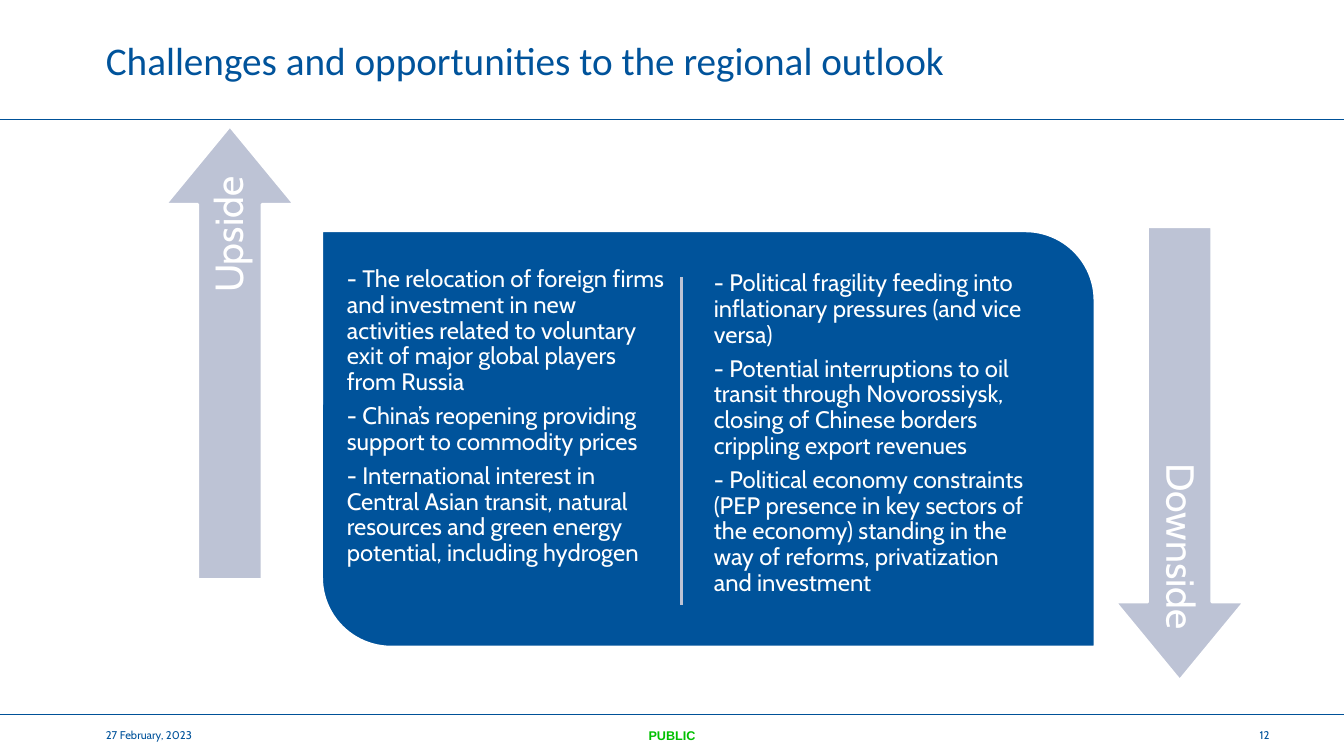
from lxml.etree import SubElement
from pptx import Presentation
from pptx.dml.color import RGBColor
from pptx.enum.shapes import MSO_CONNECTOR, MSO_SHAPE
from pptx.enum.text import MSO_ANCHOR, PP_ALIGN
from pptx.oxml.ns import qn
from pptx.util import Inches, Pt

BLUE, RULE_BLUE, GREY, WHITE, GREEN = "00539B", "005198", "BDC3D5", "FFFFFF", "00C000"
SLIDE_WIDTH, SLIDE_HEIGHT = 13.33, 7.5
HEADER_BOTTOM, FOOTER_TOP = 1.18, 7.09
FOOTER_HEIGHT = SLIDE_HEIGHT - FOOTER_TOP

UPSIDES = [
    "- The relocation of foreign firms and investment in new activities related to "
    "voluntary exit of major global players from Russia",
    "- China’s reopening providing support to commodity prices",
    "- International interest in Central Asian transit, natural resources and green "
    "energy potential, including hydrogen",
]
DOWNSIDES = [
    "- Political fragility feeding into inflationary pressures (and vice versa)",
    "- Potential interruptions to oil transit through Novorossiysk, closing of Chinese "
    "borders crippling export revenues",
    "- Political economy constraints (PEP presence in key sectors of the economy) "
    "standing in the way of reforms, privatization and investment",
]


def rgb(value):
    return RGBColor.from_string(value)


def write(frame, paragraphs, size, font="Cabin", color=WHITE, bold=False,
          align=PP_ALIGN.LEFT, anchor=MSO_ANCHOR.MIDDLE, inset=0, line=1.0, after=0):
    frame.word_wrap = True
    frame.vertical_anchor = anchor
    frame.margin_left = frame.margin_right = Inches(inset)
    frame.margin_top = frame.margin_bottom = Inches(inset)
    for index, text in enumerate(paragraphs):
        paragraph = frame.add_paragraph() if index else frame.paragraphs[0]
        paragraph.text = text
        paragraph.alignment = align
        paragraph.line_spacing = line
        paragraph.space_before, paragraph.space_after = Pt(0), Pt(after)
        paragraph.font.name, paragraph.font.size = font, Pt(size)
        paragraph.font.bold = bold
        paragraph.font.color.rgb = rgb(color)


def place(item, left, top, width, height):
    item.left, item.top = Inches(left), Inches(top)
    item.width, item.height = Inches(width), Inches(height)


def add_text(slide, box, paragraphs, size, rotation=0, **text_format):
    label = slide.shapes.add_textbox(*map(Inches, box))
    label.rotation = rotation
    write(label.text_frame, paragraphs, size, **text_format)


def add_rule(slide, start, end, color, width):
    rule = slide.shapes.add_connector(MSO_CONNECTOR.STRAIGHT, *map(Inches, start + end))
    rule.line.color.rgb = rgb(color)
    rule.line.width = Pt(width)
    SubElement(rule._element.spPr, qn("a:effectLst"))


def add_block(slide, preset, box, color, adjustments, rotation=0):
    block = slide.shapes.add_shape(preset, *map(Inches, box))
    for index, value in enumerate(adjustments):
        block.adjustments[index] = value
    block.rotation = rotation
    block.shadow.inherit = False
    block.fill.solid()
    block.fill.fore_color.rgb = rgb(color)
    block.line.color.rgb = rgb(WHITE)
    block.line.width = Pt(2)


def add_direction(slide, word, arrow_at, word_at, rotation):
    add_block(slide, MSO_SHAPE.RIGHT_ARROW, arrow_at + (4.5, 1.28), GREY,
              (0.498, 0.607), rotation)
    add_text(slide, word_at + (4.11, 0.64), [word], 28, rotation,
             align=PP_ALIGN.RIGHT, inset=0.12, line=0.9, after=10)


def main():
    prs = Presentation()
    prs.slide_width, prs.slide_height = Inches(SLIDE_WIDTH), Inches(SLIDE_HEIGHT)
    slide = prs.slides.add_slide(prs.slide_layouts[5])

    # Header and footer rules
    for y in (HEADER_BOTTOM, FOOTER_TOP):
        add_rule(slide, (0, y), (SLIDE_WIDTH, y), RULE_BLUE, 0.25)

    # Title
    title = slide.shapes.title
    place(title, 1.05, 0, 8.61, HEADER_BOTTOM)
    write(title.text_frame, ["Challenges and opportunities to the regional outlook"], 28,
          font="Calibri", color=BLUE)

    # Central panel with its two columns
    add_block(slide, MSO_SHAPE.ROUND_2_DIAG_RECTANGLE, (3.19, 2.29, 7.67, 4.13), BLUE,
              (0, 0.167))
    add_rule(slide, (6.76, 2.75), (6.76, 6), GREY, 2)
    for left, top, points in ((3.37, 2.58, UPSIDES), (7.01, 2.62, DOWNSIDES)):
        add_text(slide, (left, top, 3.32, 3.5), points, 17, anchor=MSO_ANCHOR.TOP,
                 inset=0.07, line=0.9, after=6)

    # Direction arrows
    add_direction(slide, "Upside", (0.03, 2.86), (0.23, 3.37), 270)
    add_direction(slide, "Downside", (9.45, 3.86), (9.64, 3.99), 90)

    # Footer
    add_text(slide, (1.05, FOOTER_TOP, 2.73, FOOTER_HEIGHT), ["27 February, 2023"], 8,
             color=BLUE)
    add_text(slide, (12.07, FOOTER_TOP, 0.52, FOOTER_HEIGHT), ["12"], 8, color=BLUE,
             align=PP_ALIGN.RIGHT)
    add_text(slide, (0, FOOTER_TOP, SLIDE_WIDTH, FOOTER_HEIGHT), ["PUBLIC"], 9,
             font="Arial", color=GREEN, bold=True, align=PP_ALIGN.CENTER)

    prs.save("out.pptx")


if __name__ == "__main__":
    main()
